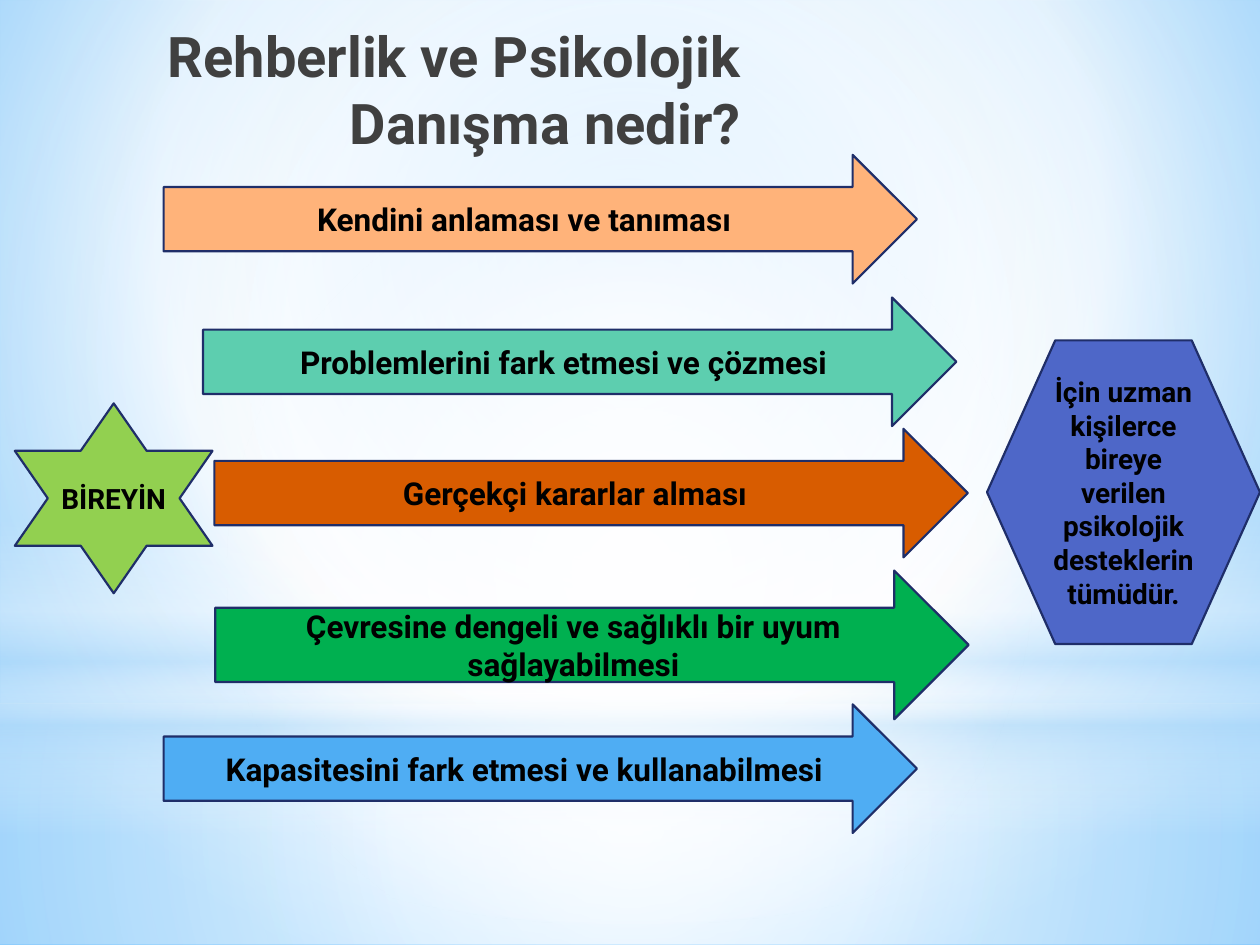
from dataclasses import dataclass

from lxml import etree
from pptx import Presentation
from pptx import util as u
from pptx.dml.color import RGBColor
from pptx.enum import shapes, text
from pptx.oxml.ns import qn

Pt = u.Pt
KIND = shapes.MSO_SHAPE


@dataclass(frozen=True)
class Theme:
    font: str = "Roboto"
    head: int = 32
    body: int = 18
    small: int = 16
    edge: float = 1.25
    line: str = "1F2E69"
    ink: str = "000000"
    title: str = "404040"
    star: str = "92D050"
    hexa: str = "4E67C8"
    peach: str = "FFB37A"
    mint: str = "5DCEAF"
    rust: str = "D85C00"
    green: str = "00B050"
    blue: str = "4FADF3"
    white: str = "FFFFFF"
    haze: str = "B4DCFA"
    sky: str = "9ED5FF"
    deep: str = "5BB9FF"


def apply(item, values):
    for name, value in values.items():
        setattr(item, name, value)


def blend(root, stops, focus=None):
    """Rewrite the gradient under root: (percent, colour, opacity) stops,
    circular around the focus insets, or running downwards without one."""
    grad = root.find(".//" + qn("a:gradFill"))
    for child in list(grad):
        grad.remove(child)

    def add(parent, tag, **attrs):
        return etree.SubElement(parent, qn("a:" + tag),
                                {k: str(v) for k, v in attrs.items()})

    grad.set("rotWithShape", "1")
    group = add(grad, "gsLst")
    for place, color, alpha in stops:
        stop = add(group, "gs", pos=place * 1000)
        tone = add(stop, "srgbClr", val=color)
        if alpha < 100:
            add(tone, "alpha", val=alpha * 1000)
    if focus:
        ring = add(grad, "path", path="circle")
        add(ring, "fillToRect",
            **{side: inset * 1000 for side, inset in zip("ltrb", focus)})
    else:
        add(grad, "lin", ang=90 * 60000, scaled=0)


class Deck:
    def __init__(self, theme, width, height):
        self.theme = theme
        self.show = Presentation()
        apply(self.show, {"slide_width": Pt(width), "slide_height": Pt(height)})
        self.slide = self.show.slides.add_slide(self.show.slide_layouts[6])

    def back(self, stops, focus):
        self.slide.background.fill.gradient()
        blend(self.slide.element, stops, focus)

    def shape(self, kind, box):
        item = self.slide.shapes.add_shape(kind, *map(Pt, box))
        item.shadow.inherit = False
        return item

    def glow(self, kind, box, stops, focus=None):
        """Add a translucent, unlined gradient shape."""
        item = self.shape(kind, box)
        item.line.fill.background()
        item.fill.gradient()
        blend(item.element, stops, focus)

    def phrase(self, frame, words, size, color, align, **frames):
        """Put one styled paragraph into a text frame."""
        apply(frame, {"word_wrap": True, **frames})
        para = frame.paragraphs[0]
        para.alignment = align
        run = para.add_run()
        run.text = words
        apply(run.font, {"name": self.theme.font, "size": Pt(size), "bold": True})
        run.font.color.rgb = RGBColor.from_string(color)

    def title(self, box, words):
        item = self.slide.shapes.add_textbox(*map(Pt, box))
        self.phrase(item.text_frame, words, self.theme.head, self.theme.title,
                    text.PP_ALIGN.RIGHT, vertical_anchor=text.MSO_ANCHOR.TOP)

    def label(self, kind, box, color, words, size, wrap=True):
        """Add an outlined shape with centred text."""
        item = self.shape(kind, box)
        item.fill.solid()
        item.fill.fore_color.rgb = RGBColor.from_string(color)
        item.line.color.rgb = RGBColor.from_string(self.theme.line)
        item.line.width = Pt(self.theme.edge)
        self.phrase(item.text_frame, words, size, self.theme.ink,
                    text.PP_ALIGN.CENTER, word_wrap=wrap,
                    vertical_anchor=text.MSO_ANCHOR.MIDDLE)


def main():
    t = Theme()
    wide, high, split = 720, 540, 402
    mid = (50, 50, 50, 50)
    deck = Deck(t, wide, high)

    deck.back([(0, t.sky, 100), (60, t.white, 100), (100, t.deep, 100)],
              (20, 10, 20, 60))
    deck.glow(KIND.RECTANGLE, (0, split, wide, high - split),
              [(0, t.white, 91), (37, t.white, 76), (100, t.haze, 79)], mid)
    deck.glow(KIND.RECTANGLE, (0, 0, wide, split),
              [(0, t.white, 89), (48, t.white, 62), (100, t.haze, 79)], mid)
    deck.glow(KIND.RECTANGLE, (0, 297, wide, 180),
              [(0, t.white, 0), (29, t.white, 30), (45, t.haze, 40),
               (55, t.white, 26), (65, t.haze, 60), (100, t.white, 0)])
    deck.glow(KIND.OVAL, (0, 126, wide, split),
              [(0, t.white, 100), (56, t.white, 0)], mid)

    deck.title((36.5, 8.5, 394, 45.5), "Rehberlik ve Psikolojik Danışma nedir?")
    deck.label(KIND.STAR_6_POINT, (8.5, 230.5, 113, 108.5), t.star,
               "BİREYİN", t.small, wrap=False)

    arrows = [
        (93.5, 88.5, 73.5, t.peach, "Kendini anlaması ve tanıması"),
        (116, 170, 73.5, t.mint, "Problemlerini fark etmesi ve çözmesi"),
        (122.5, 245, 73.5, t.rust, "Gerçekçi kararlar alması"),
        (123, 326, 85, t.green,
         "Çevresine dengeli ve sağlıklı bir uyum sağlayabilmesi"),
        (93.5, 402.5, 73.5, t.blue, "Kapasitesini fark etmesi ve kullanabilmesi"),
    ]
    for left, top, tall, color, words in arrows:
        deck.label(KIND.RIGHT_ARROW, (left, top, 430.5, tall), color, words, t.body)

    deck.label(KIND.HEXAGON, (564, 194.5, 156, 173.5), t.hexa,
               "İçin uzman kişilerce bireye verilen psikolojik desteklerin tümüdür.",
               t.small)
    deck.show.save("out.pptx")


if __name__ == "__main__":
    main()
